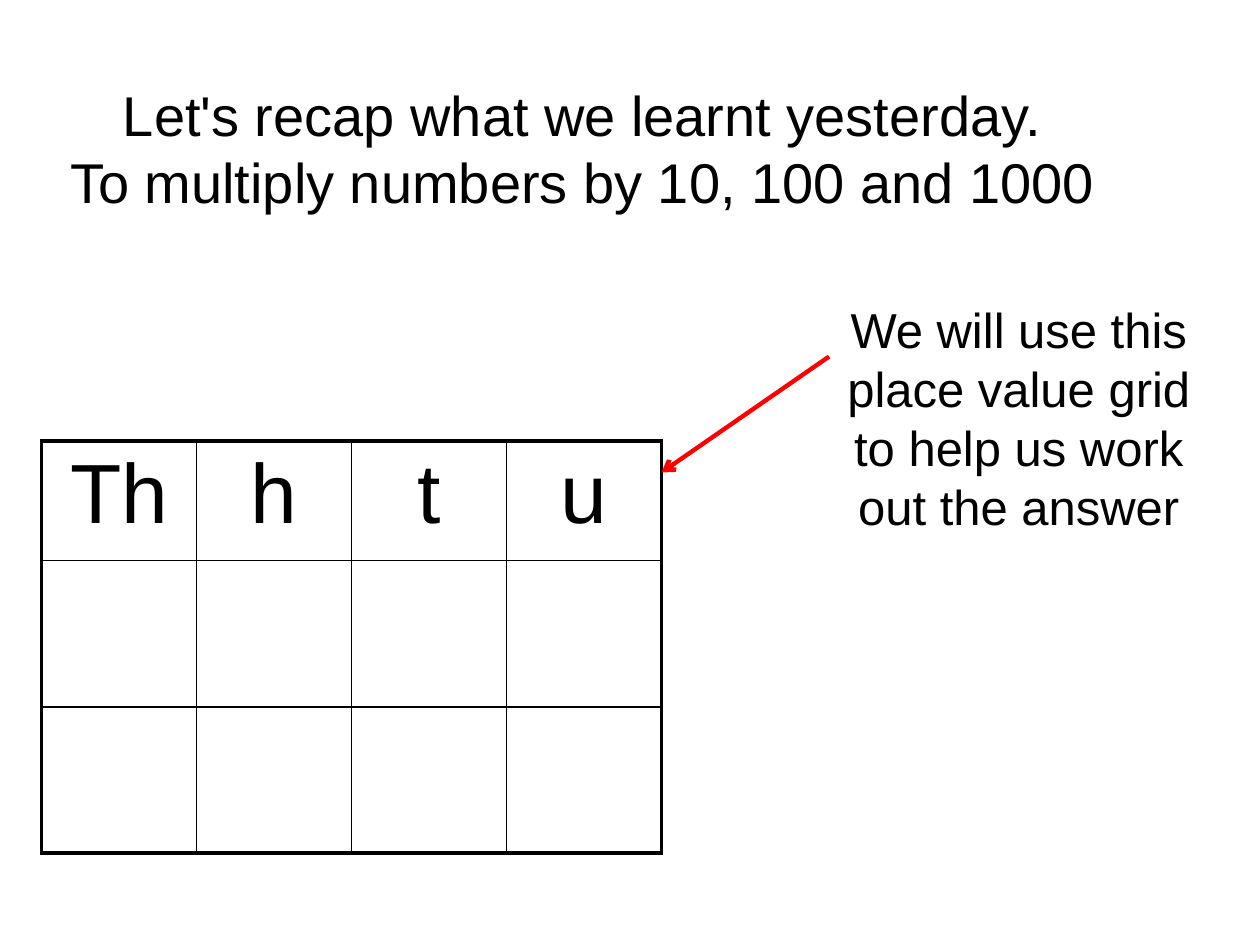
from dataclasses import dataclass

from lxml.etree import SubElement
from pptx import Presentation
from pptx.dml.color import RGBColor
from pptx.enum.shapes import MSO_CONNECTOR
from pptx.enum.text import MSO_ANCHOR, MSO_AUTO_SIZE, PP_ALIGN
from pptx.oxml.ns import qn
from pptx.util import Emu, Pt

EMU_PER_PX = 9144  # 100 px to the inch
BLACK = "000000"
RED = "FF0000"
THIN, THICK = 1, 2.25


@dataclass(frozen=True)
class TextBlock:
    left: int
    top: int
    width: int
    height: int
    lines: tuple[str, ...]
    size: int


TEXT_BLOCKS = (
    TextBlock(25, 59, 875, 118, (
        "Let's recap what we learnt yesterday.",
        "To multiply numbers by 10, 100 and 1000",
    ), 32),
    TextBlock(650, 233, 317, 199, (
        "We will use this place value grid to help us work out the answer",
    ), 28),
)

PLACE_VALUES = ("Th", "h", "t", "u")
GRID_LEFT, GRID_TOP = 33, 350
COLUMN_WIDTH = 123
ROW_HEIGHTS = (95, 116, 116)


def px(length: int) -> Emu:
    return Emu(length * EMU_PER_PX)


def rgb(value: str) -> RGBColor:
    return RGBColor.from_string(value)


def write_text(paragraph, text: str, *, size: int, color: str = BLACK,
               font: str = "Arial", align=PP_ALIGN.CENTER) -> None:
    paragraph.alignment = align
    run = paragraph.add_run()
    run.text = text
    run.font.size = Pt(size)
    run.font.name = font
    run.font.bold = False
    run.font.color.rgb = rgb(color)


def draw_text_block(slide, block: TextBlock) -> None:
    shape = slide.shapes.add_textbox(
        px(block.left), px(block.top), px(block.width), px(block.height))
    frame = shape.text_frame
    frame.word_wrap = True
    frame.auto_size = MSO_AUTO_SIZE.SHAPE_TO_FIT_TEXT
    for index, line in enumerate(block.lines):
        paragraph = frame.add_paragraph() if index else frame.paragraphs[0]
        write_text(paragraph, line, size=block.size)


def set_borders(cell, widths: dict[str, float], color: str = BLACK) -> None:
    """Draw borders keyed by side, given in the order L, R, T, B."""
    properties = cell._tc.get_or_add_tcPr()
    for side, width in widths.items():
        line = SubElement(properties, qn(f"a:ln{side}"), w=str(Pt(width)))
        fill = SubElement(line, qn("a:solidFill"))
        SubElement(fill, qn("a:srgbClr"), val=color)


def draw_place_value_grid(slide) -> None:
    row_count, column_count = len(ROW_HEIGHTS), len(PLACE_VALUES)
    table = slide.shapes.add_table(
        row_count, column_count, px(GRID_LEFT), px(GRID_TOP),
        px(COLUMN_WIDTH * column_count), px(sum(ROW_HEIGHTS))).table
    table.first_row = False
    table.horz_banding = False
    for column in table.columns:
        column.width = px(COLUMN_WIDTH)
    for row_index, height in enumerate(ROW_HEIGHTS):
        table.rows[row_index].height = px(height)
        for column_index, place_value in enumerate(PLACE_VALUES):
            cell = table.cell(row_index, column_index)
            set_borders(cell, {
                "L": THICK if column_index == 0 else THIN,
                "R": THICK if column_index == column_count - 1 else THIN,
                "T": THICK if row_index == 0 else THIN,
                "B": THICK if row_index == row_count - 1 else THIN,
            })
            cell.fill.background()
            cell.vertical_anchor = MSO_ANCHOR.TOP
            if row_index == 0:
                write_text(cell.text_frame.paragraphs[0], place_value, size=48)


def draw_arrow(slide, start: tuple[int, int], end: tuple[int, int],
               color: str, width: float) -> None:
    arrow = slide.shapes.add_connector(
        MSO_CONNECTOR.STRAIGHT, *map(px, start), *map(px, end))
    arrow.line.color.rgb = rgb(color)
    arrow.line.width = Pt(width)
    SubElement(arrow.line._get_or_add_ln(), qn("a:tailEnd"), type="arrow")
    SubElement(arrow._element.spPr, qn("a:effectLst"))


def main() -> None:
    presentation = Presentation()
    presentation.slide_width = px(1000)
    presentation.slide_height = px(750)
    slide = presentation.slides.add_slide(presentation.slide_layouts[6])
    title, explanation = TEXT_BLOCKS
    draw_text_block(slide, title)
    draw_place_value_grid(slide)
    draw_text_block(slide, explanation)
    draw_arrow(slide, (658, 283), (525, 375), RED, 2.5)
    presentation.save("out.pptx")


if __name__ == "__main__":
    main()
